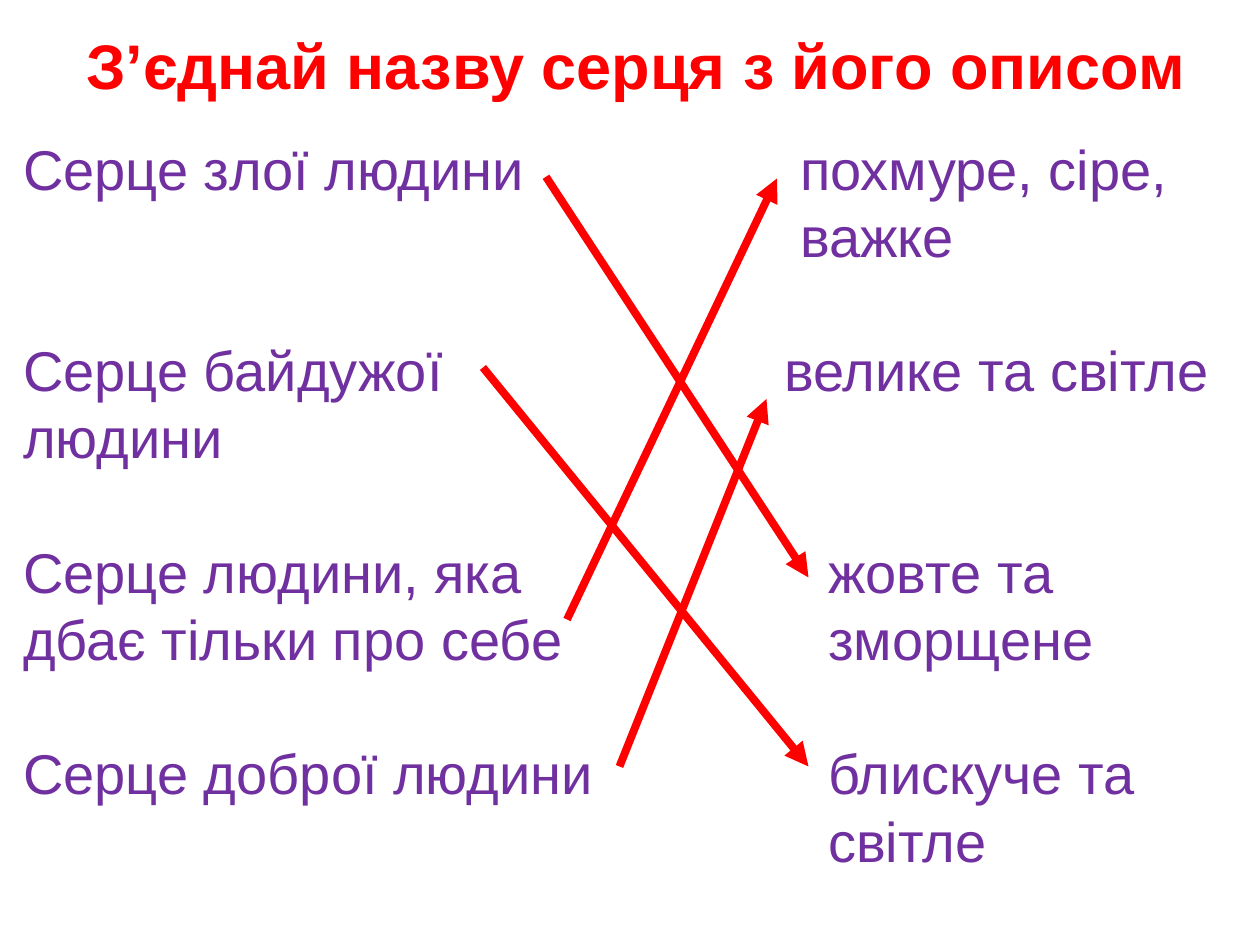
from lxml import etree
from pptx import Presentation
from pptx import util as u
from pptx.dml import color
from pptx.enum import shapes, text
from pptx.oxml import ns

COLORS = {"title": "FF0000", "hearts": "7030A0", "arrow": "FF0000"}


def set_values(target, values):
    for name, value in values.items():
        setattr(target, name, value)


def format_runs(paragraph, values, color_name):
    for run in paragraph.runs:
        set_values(run.font, {"name": "Arial", **values})
        run.font.color.rgb = color.RGBColor.from_string(COLORS[color_name])


prs = Presentation()
set_values(prs, {"slide_width": u.Pt(720), "slide_height": u.Pt(540)})
slide = prs.slides.add_slide(prs.slide_layouts[3])
heading, hearts, descriptions = list(slide.placeholders)[:3]

places = [
    (heading, (42, 1, 648, 72), text.MSO_ANCHOR.MIDDLE),
    (hearts, (6, 73, 354, 440), text.MSO_ANCHOR.TOP),
    (descriptions, (441, 73, 273, 440), text.MSO_ANCHOR.TOP),
]
for holder, box, anchor in places:
    set_values(holder, dict(zip(("left", "top", "width", "height"), map(u.Pt, box))))
    set_values(holder.text_frame, {
        "word_wrap": True,
        "auto_size": text.MSO_AUTO_SIZE.NONE,
        "vertical_anchor": anchor,
    })

heading.text_frame.text = "З’єднай назву серця з його описом"
heading_line = heading.text_frame.paragraphs[0]
heading_line.alignment = text.PP_ALIGN.LEFT
format_runs(heading_line, {"size": u.Pt(36), "bold": True}, "title")

LINE_PITCH = 38.4
LINES_PER_PAIR = 3
columns = [
    (hearts, [
        ("Серце злої людини", 0),
        ("Серце байдужої\vлюдини", 0),
        ("Серце людини, яка\vдбає тільки про себе", 0),
        ("Серце доброї людини", 0),
    ]),
    (descriptions, [
        ("похмуре, сіре,\vважке", 9),
        ("велике та світле", 0),
        ("жовте та\vзморщене", 25),
        ("блискуче та\vсвітле", 25),
    ]),
]
for column, entries in columns:
    frame = column.text_frame
    free_lines = 0
    for index, (wording, indent) in enumerate(entries):
        entry = frame.add_paragraph() if index else frame.paragraphs[0]
        entry.text = wording
        set_values(entry, {
            "alignment": text.PP_ALIGN.LEFT,
            "line_spacing": u.Pt(LINE_PITCH),
            "space_before": u.Pt(LINE_PITCH * free_lines),
        })
        free_lines = LINES_PER_PAIR - len(wording.split("\v"))
        props = entry._p.get_or_add_pPr()
        props.set("marL", str(u.Pt(indent)))
        props.set("indent", "0")
        etree.SubElement(props, ns.qn("a:buNone"))
        format_runs(entry, {"size": u.Pt(32)}, "hearts")

matches = [
    (276, 210, 462, 438),
    (312, 101, 462, 330),
    (324, 354, 444, 102),
    (354, 438, 438, 228),
]
for ends in matches:
    arrow = slide.shapes.add_connector(shapes.MSO_CONNECTOR.STRAIGHT, *map(u.Pt, ends))
    arrow.line.width = u.Pt(4.5)
    arrow.line.color.rgb = color.RGBColor.from_string(COLORS["arrow"])
    etree.SubElement(arrow.line._get_or_add_ln(), ns.qn("a:tailEnd"), type="triangle")
    etree.SubElement(arrow._element.spPr, ns.qn("a:effectLst"))

prs.save("out.pptx")
